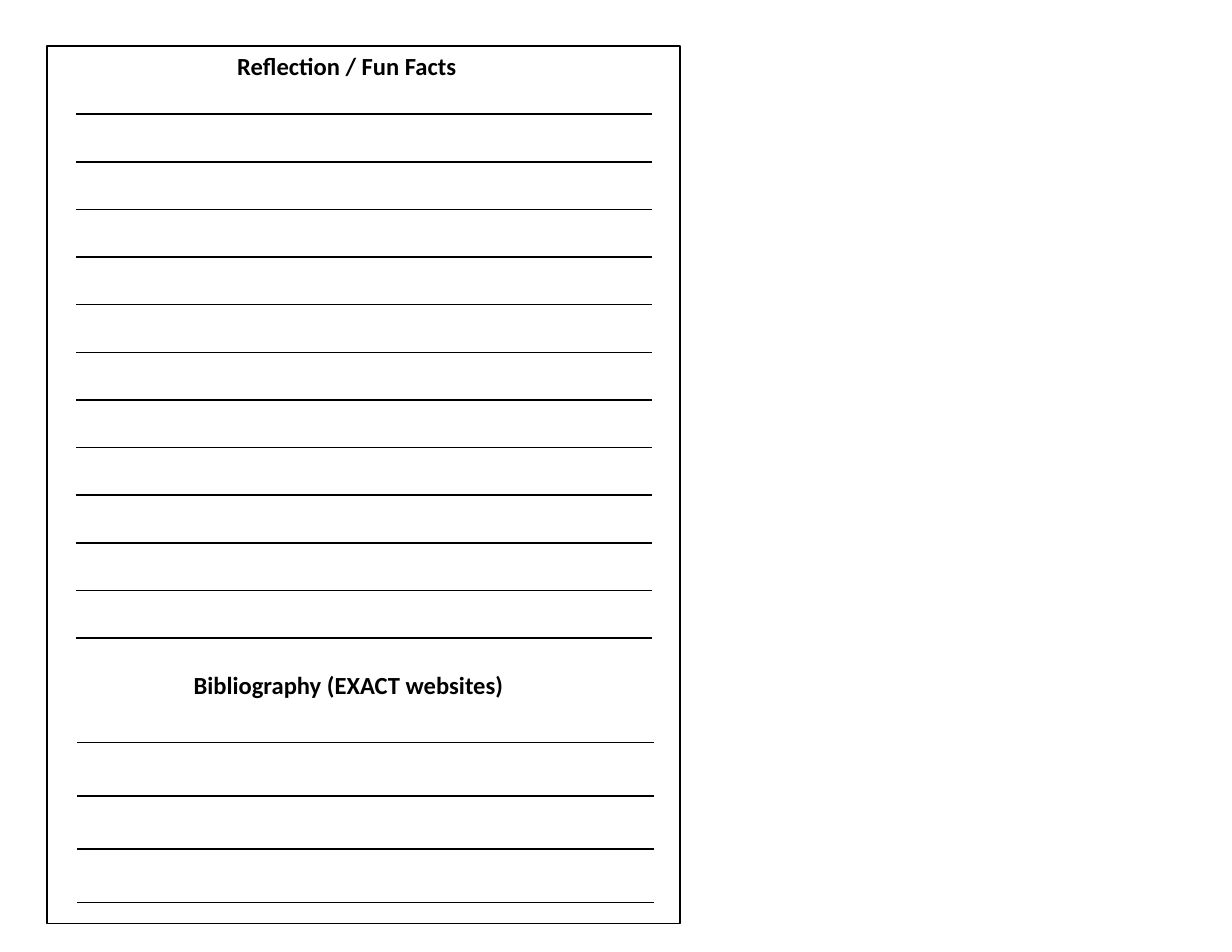
from lxml.etree import SubElement
from pptx import Presentation
from pptx.dml.color import RGBColor
from pptx.enum.shapes import MSO_CONNECTOR, MSO_SHAPE
from pptx.enum.text import MSO_AUTO_SIZE
from pptx.oxml.ns import qn
from pptx.util import Cm, Pt

BLACK = "000000"


def color(hex_text):
    return RGBColor.from_string(hex_text)


def outline(shape):
    shape.line.color.rgb = color(BLACK)
    shape.line.width = Pt(1)


deck = Presentation()
deck.slide_width, deck.slide_height = Cm(27.94), Cm(21.59)
page = deck.slides.add_slide(deck.slide_layouts[6])

frame = page.shapes.add_shape(
    MSO_SHAPE.RECTANGLE, Cm(1.07), Cm(1.04), Cm(14.35), Cm(19.91))
frame.shadow.inherit = False
frame.fill.background()
outline(frame)

# heading, its left, top and width, then the rules' left, right, top, gap and count
sections = [
    ("Reflection / Fun Facts", 5.13, 1.02, 5.54, 1.73, 14.78, 2.59, 1.08, 12),
    ("Bibliography (EXACT websites)", 4.14, 15.06, 7.59, 1.75, 14.83, 16.84, 1.21, 4),
]
for heading, left, top, width, start, end, first, gap, count in sections:
    box = page.shapes.add_textbox(Cm(left), Cm(top), Cm(width), Cm(0.94))
    box.text_frame.word_wrap = False
    box.text_frame.auto_size = MSO_AUTO_SIZE.SHAPE_TO_FIT_TEXT
    box.text_frame.text = heading
    font = box.text_frame.paragraphs[0].runs[0].font
    font.name, font.size, font.bold = "Calibri", Pt(15.8), True
    font.color.rgb = color(BLACK)

    for row in range(count):
        height = Cm(first + row * gap)
        rule = page.shapes.add_connector(
            MSO_CONNECTOR.STRAIGHT, Cm(start), height, Cm(end), height)
        outline(rule)
        SubElement(rule._element.spPr, qn("a:effectLst"))

deck.save("out.pptx")
